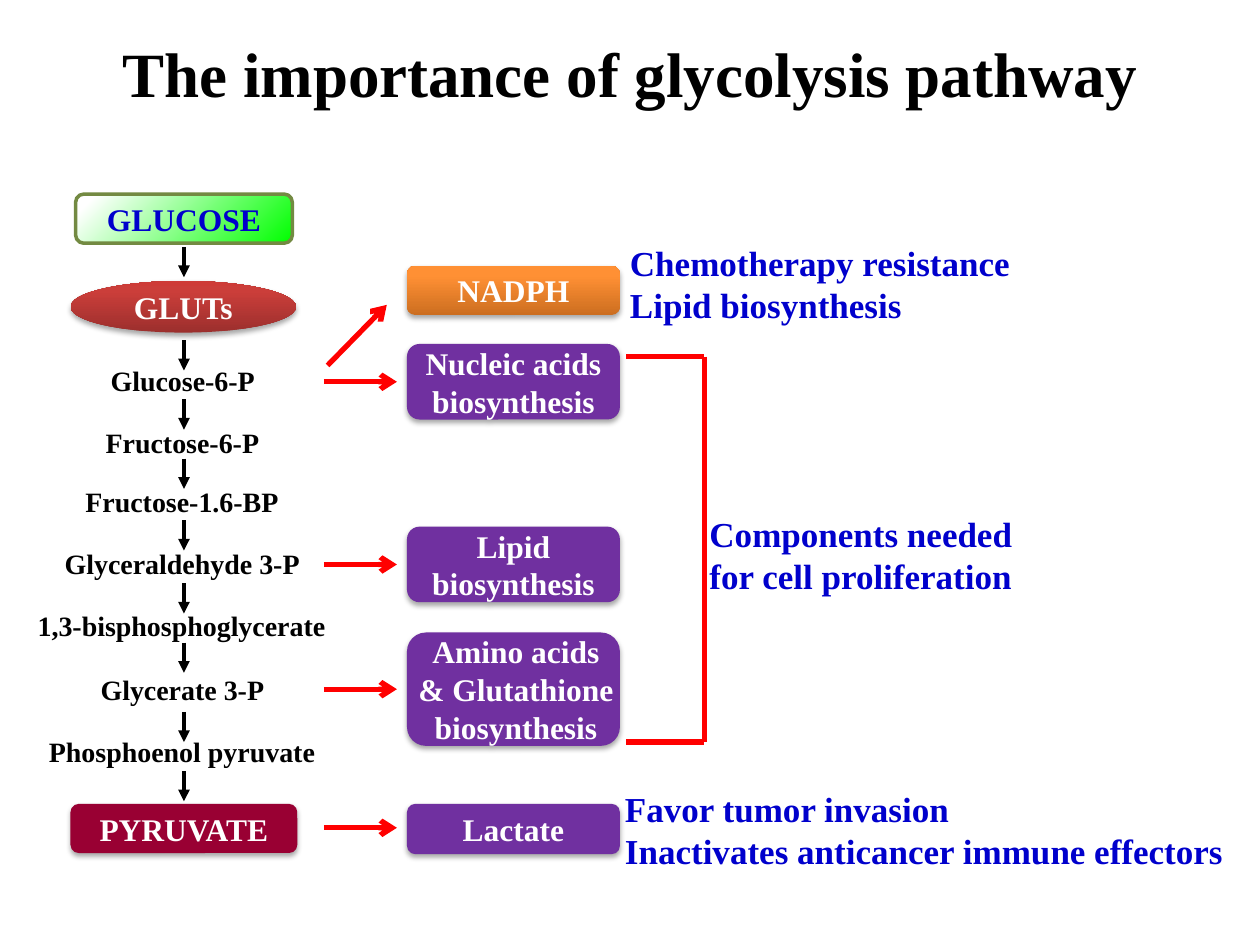
from lxml import etree
from pptx import Presentation
from pptx.dml.color import RGBColor
from pptx.enum.shapes import MSO_CONNECTOR, MSO_SHAPE
from pptx.enum.text import MSO_ANCHOR, MSO_AUTO_SIZE, PP_ALIGN
from pptx.oxml import parse_xml
from pptx.oxml.ns import nsdecls, qn
from pptx.util import Inches, Pt

ROUNDED = MSO_SHAPE.ROUNDED_RECTANGLE
OVAL = MSO_SHAPE.OVAL
STRAIGHT = MSO_CONNECTOR.STRAIGHT
MIDDLE = MSO_ANCHOR.MIDDLE
TOP = MSO_ANCHOR.TOP
CENTER = PP_ALIGN.CENTER
LEFT = PP_ALIGN.LEFT
GROW = MSO_AUTO_SIZE.SHAPE_TO_FIT_TEXT

FONT = "Times New Roman"
BLACK, WHITE, RED = "000000", "FFFFFF", "FF0000"
BLUE, PURPLE, CRIMSON, OLIVE = "0000CC", "7030A0", "990033", "738A42"
GREEN_FADE = ([(8, "FFFFFF"), (100, "00FF00")], 45)
RED_FADE = ([(0, "9C2F2D"), (80, "CB3E3A"), (100, "CE3B37")], 270)
ORANGE_FADE = ([(0, "CC6E20"), (80, "FF9034"), (100, "FF9136")], 270)

PATHWAY_X = 1.46
PRODUCT_LEFT, PRODUCT_WIDTH = 3.23, 1.69
BRACKET_LEFT, BRACKET_RIGHT, BRACKET_TOP, BRACKET_BOTTOM = 4.97, 5.59, 2.83, 5.89
NARROW_INSETS = (0.04, 0)

METABOLITES = [
    ("Glucose-6-P", 2.84, 1.36),
    ("Fructose-6-P", 3.33, 1.44),
    ("Fructose-1.6-BP", 3.8, 1.76),
    ("Glyceraldehyde 3-P", 4.29, 2.09),
    ("1,3-bisphosphoglycerate", 4.78, 2.52),
    ("Glycerate 3-P", 5.29, 1.52),
    ("Phosphoenol pyruvate", 5.78, 2.34),
]
STEP_TOPS = [1.96, 2.7, 3.17, 3.64, 4.13, 4.63, 5.1, 5.65, 6.12]
BRANCH_HEIGHTS = [3.03, 4.48, 5.47, 6.57]
PRODUCTS = [
    ("NADPH", 2.11, 0.39, ORANGE_FADE, None),
    ("Nucleic acids biosynthesis", 2.73, 0.6, PURPLE, None),
    ("Lipid biosynthesis", 4.18, 0.6, PURPLE, None),
    ("Amino acids & Glutathione biosynthesis", 5.02, 0.9, PURPLE, NARROW_INSETS),
    ("Lactate", 6.38, 0.4, PURPLE, None),
]
OUTCOMES = [
    (["Chemotherapy resistance", "Lipid biosynthesis"], 4.96, 1.87, 3.86),
    (["Components needed", "for cell proliferation"], 5.59, 4.02, 3.11),
    (["Favor tumor invasion", "Inactivates anticancer immune effectors"], 4.92, 6.2, 4.96),
]


def color(value):
    """Return the colour for a hex string."""
    return RGBColor.from_string(value)


def write(frame, lines, size, ink, align=LEFT, anchor=TOP, insets=None):
    """Write bold lines as paragraphs of a text frame."""
    frame.vertical_anchor = anchor
    if insets:
        frame.margin_left, frame.margin_right = map(Inches, insets)
    for index, line in enumerate(lines):
        para = frame.add_paragraph() if index else frame.paragraphs[0]
        para.alignment = align
        span = para.add_run()
        span.text = line
        span.font.name = FONT
        span.font.size = Pt(size)
        span.font.bold = True
        span.font.color.rgb = color(ink)


def add_text(slide, lines, at, size, ink, wrap, insets=None):
    """Add a growing text box."""
    box = slide.shapes.add_textbox(*map(Inches, at))
    box.text_frame.word_wrap = wrap
    box.text_frame.auto_size = GROW
    write(box.text_frame, lines, size, ink, insets=insets)


def fill_gradient(box, stops, angle):
    """Give a shape a linear gradient, its angle measured clockwise."""
    marks = "".join(
        f'<a:gs pos="{place * 1000}"><a:srgbClr val="{value}"/></a:gs>'
        for place, value in stops
    )
    gradient = parse_xml(
        f'<a:gradFill {nsdecls("a")} rotWithShape="1"><a:gsLst>{marks}</a:gsLst>'
        f'<a:lin ang="{angle * 60000}" scaled="0"/></a:gradFill>'
    )
    box._element.spPr.find(qn("a:prstGeom")).addnext(gradient)


def add_shadow(box):
    """Give a shape a soft shadow below it."""
    effects = box._element.spPr.find(qn("a:effectLst"))
    effects.append(parse_xml(
        f'<a:outerShdw {nsdecls("a")} blurRad="{Pt(3.1)}" dist="{Pt(1.8)}" '
        'dir="5400000" rotWithShape="0"><a:srgbClr val="000000">'
        '<a:alpha val="35000"/></a:srgbClr></a:outerShdw>'
    ))


def add_box(slide, label, at, fill, kind=ROUNDED, ink=WHITE, outline=None, insets=None):
    """Add a labelled shape, shadowed unless it is outlined."""
    box = slide.shapes.add_shape(kind, *map(Inches, at))
    box.shadow.inherit = False
    if isinstance(fill, tuple):
        fill_gradient(box, *fill)
    else:
        box.fill.solid()
        box.fill.fore_color.rgb = color(fill)
    if outline:
        box.line.color.rgb = color(outline)
        box.line.width = Pt(2)
    else:
        box.line.fill.background()
        add_shadow(box)
    box.text_frame.word_wrap = True
    write(box.text_frame, [label], 18, ink, CENTER, MIDDLE, insets)


def add_line(slide, start, end, ink=RED, width=3, head=None):
    """Add a straight line, with an arrowhead at its end if one is named."""
    line = slide.shapes.add_connector(STRAIGHT, *map(Inches, start + end))
    line.line.color.rgb = color(ink)
    line.line.width = Pt(width)
    if head:
        etree.SubElement(line.line._get_or_add_ln(), qn("a:tailEnd"), type=head)
    etree.SubElement(line._element.spPr, qn("a:effectLst"))


def add_title(slide, text):
    """Place and write the slide title."""
    title = slide.shapes.title
    title.left, title.top, title.width, title.height = map(Inches, (0, 0, 10, 1.14))
    write(title.text_frame, [text], 36, BLACK, CENTER, MIDDLE)


def add_pathway(slide):
    """Add the column of metabolites from glucose to pyruvate."""
    add_box(slide, "GLUCOSE", (0.6, 1.54, 1.72, 0.39), GREEN_FADE, ink=BLUE, outline=OLIVE)
    add_box(slide, "GLUTs", (0.56, 2.23, 1.79, 0.41), RED_FADE, OVAL)
    add_box(slide, "PYRUVATE", (0.56, 6.38, 1.8, 0.39), CRIMSON)
    for name, top, width in METABOLITES:
        add_text(slide, [name], (PATHWAY_X - width / 2, top, width, 0.37), 16, BLACK, False)
    for top in STEP_TOPS:
        add_line(slide, (PATHWAY_X, top), (PATHWAY_X, top + 0.24), BLACK, 2.25, "triangle")


def add_products(slide):
    """Add the branch arrows and the products they lead to."""
    for label, top, height, fill, insets in PRODUCTS:
        at = (PRODUCT_LEFT, top, PRODUCT_WIDTH, height)
        add_box(slide, label, at, fill, insets=insets)
    for height in BRANCH_HEIGHTS:
        add_line(slide, (2.57, height), (3.15, height), head="arrow")
    add_line(slide, (2.6, 2.9), (3.07, 2.42), head="arrow")


def add_outcomes(slide):
    """Add the bracket and the outcomes on the right."""
    for height in (BRACKET_TOP, BRACKET_BOTTOM):
        add_line(slide, (BRACKET_LEFT, height), (BRACKET_RIGHT, height))
    add_line(slide, (BRACKET_RIGHT, BRACKET_TOP), (BRACKET_RIGHT, BRACKET_BOTTOM))
    for lines, left, top, width in OUTCOMES:
        add_text(slide, lines, (left, top, width, 0.77), 20, BLUE, True, NARROW_INSETS)


def main():
    """Build the slide and save it."""
    deck = Presentation()
    deck.slide_width, deck.slide_height = Inches(10), Inches(7.5)
    page = deck.slides.add_slide(deck.slide_layouts[5])
    add_title(page, "The importance of glycolysis pathway")
    add_pathway(page)
    add_products(page)
    add_outcomes(page)
    deck.save("out.pptx")


if __name__ == "__main__":
    main()
